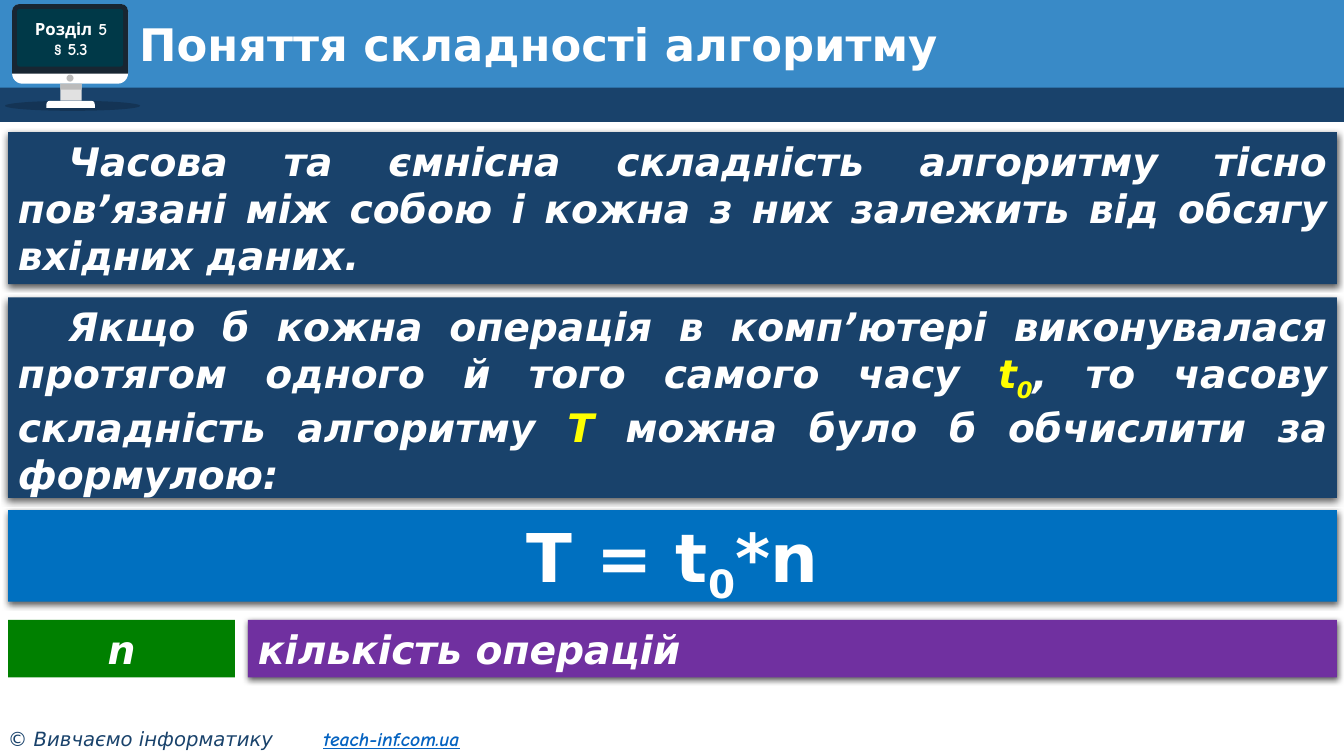
from dataclasses import dataclass

from lxml import etree
from pptx import Presentation
from pptx import util as u
from pptx.dml.color import RGBColor
from pptx.enum import shapes, text
from pptx.oxml.ns import qn

COLORS = {
    "white": "FFFFFF", "black": "000000", "navy": "19426B", "header": "398AC7",
    "formula": "0070C0", "purple": "7030A0", "green": "008000",
    "yellow": "FFFF00", "link": "0563C1", "frame": "182632",
    "screen": "003948", "stand": "E1E1E1", "grey": "BBBBBB",
}
MAIN_FONT, SMALL_FONT = "DejaVu Sans", "Comic Neue"
KIND = shapes.MSO_SHAPE
ALIGN = text.PP_ALIGN
MIDDLE = text.MSO_ANCHOR.MIDDLE
GROW = text.MSO_AUTO_SIZE.SHAPE_TO_FIT_TEXT
MARGIN, FULL_WIDTH = 0.08, 13.18


@dataclass
class Piece:
    words: str
    color: str = "white"
    subscript: bool = False
    font: str = MAIN_FONT
    bold: bool = True
    italic: bool = False
    underline: bool = False


@dataclass
class Block:
    """A plain filled shape; corners are its adjustment values."""
    box: tuple[float, float, float, float]
    color: str
    kind: KIND = KIND.RECTANGLE
    corners: tuple[float, ...] = ()
    alpha: int = 100


@dataclass
class Panel:
    block: Block
    pieces: list[Piece]
    size: int = 28
    align: ALIGN = ALIGN.LEFT
    indent: float = 0
    shadow: bool = True


def rgb(color: str) -> RGBColor:
    return RGBColor.from_string(COLORS[color])


def write(frame, *paragraphs: list[Piece], size: int, align=ALIGN.LEFT,
          anchor=text.MSO_ANCHOR.TOP, fit=text.MSO_AUTO_SIZE.NONE,
          indent: float = 0, tab: float = 0, spacing: float = 1) -> None:
    frame.word_wrap = True
    frame.auto_size = fit
    frame.vertical_anchor = anchor
    for number, pieces in enumerate(paragraphs):
        line = frame.add_paragraph() if number else frame.paragraphs[0]
        line.alignment = align
        line.line_spacing = spacing
        properties = line._p.get_or_add_pPr()
        if indent:
            properties.set("marL", "0")
            properties.set("indent", str(u.Inches(indent)))
        if tab:
            stops = etree.SubElement(properties, qn("a:tabLst"))
            etree.SubElement(stops, qn("a:tab"), pos=str(u.Inches(tab)), algn="l")
        for piece in pieces:
            run = line.add_run()
            run.text = piece.words
            font = run.font
            font.name, font.size = piece.font, u.Pt(size)
            font.bold, font.italic = piece.bold, piece.italic
            font.underline = piece.underline
            font.color.rgb = rgb(piece.color)
            if piece.subscript:
                run._r.get_or_add_rPr().set("baseline", "-25000")


def draw_block(slide, block: Block):
    shape = slide.shapes.add_shape(block.kind, *map(u.Inches, block.box))
    shape.shadow.inherit = False
    shape.line.fill.background()
    shape.fill.solid()
    shape.fill.fore_color.rgb = rgb(block.color)
    for number, value in enumerate(block.corners):
        shape.adjustments[number] = value
    if block.alpha < 100:
        fill = shape._element.spPr.find(qn("a:solidFill"))
        etree.SubElement(fill[0], qn("a:alpha"), val=str(block.alpha * 1000))
    return shape


def add_shadow(shape) -> None:
    effects = shape._element.spPr.find(qn("a:effectLst"))
    outer = etree.SubElement(effects, qn("a:outerShdw"), blurRad=str(u.Pt(4.5)),
                             dist=str(u.Pt(1.5)), dir="5400000", algn="ctr",
                             rotWithShape="0")
    tint = etree.SubElement(outer, qn("a:srgbClr"), val=COLORS["black"])
    etree.SubElement(tint, qn("a:alpha"), val="63000")


def draw_panel(slide, panel: Panel) -> None:
    shape = draw_block(slide, panel.block)
    if panel.shadow:
        add_shadow(shape)
    write(shape.text_frame, panel.pieces, size=panel.size, align=panel.align,
          indent=panel.indent,
          anchor=text.MSO_ANCHOR.TOP if panel.shadow else MIDDLE,
          fit=GROW if panel.shadow else text.MSO_AUTO_SIZE.NONE)


def add_label(slide, box: tuple[float, float, float, float]):
    return slide.shapes.add_textbox(*map(u.Inches, box)).text_frame


def slanted(words: str, color: str = "white", subscript: bool = False) -> Piece:
    return Piece(words, color, subscript, italic=True)


HEADER = [
    Block((0, 0, 13.33, 0.91), "header"),
    Block((0, 0.87, 13.33, 0.34), "navy"),
]
MONITOR = [
    Block((0.05, 1, 1.34, 0.1), "black", KIND.OVAL, alpha=20),
    Block((0.12, 0.04, 1.15, 0.79), "white", KIND.ROUND_2_SAME_RECTANGLE, (0.1, 0.13)),
    Block((0.12, 0.04, 1.15, 0.69), "frame", KIND.ROUND_2_SAME_RECTANGLE, (0.1, 0)),
    Block((0.6, 0.83, 0.21, 0.17), "stand"),
    Block((0.6, 0.83, 0.21, 0.06), "grey"),
    Block((0.46, 1, 0.48, 0.07), "white", KIND.ROUND_2_SAME_RECTANGLE, (0.5, 0)),
    Block((0.66, 0.74, 0.07, 0.07), "grey", KIND.OVAL),
    Block((0.17, 0.09, 1.05, 0.57), "screen", KIND.ROUNDED_RECTANGLE, (0.04,)),
]
PANELS = [
    Panel(Block((MARGIN, 1.31, FULL_WIDTH, 1.51), "navy"),
          [slanted("Часова та ємнісна складність алгоритму тісно пов’язані між "
                   "собою і кожна з них залежить від обсягу вхідних даних.")],
          align=ALIGN.JUSTIFY, indent=0.5),
    Panel(Block((MARGIN, 2.95, FULL_WIDTH, 1.99), "navy"),
          [slanted("Якщо б кожна операція в комп’ютері виконувалася протягом "
                   "одного й того самого часу "),
           slanted("t", "yellow"), slanted("0", "yellow", True),
           slanted(", то часову складність алгоритму "), slanted("Т", "yellow"),
           slanted(" можна було б обчислити за формулою:")],
          align=ALIGN.JUSTIFY, indent=0.5),
    Panel(Block((MARGIN, 5.06, FULL_WIDTH, 0.91), "formula"),
          [Piece("Т = t"), Piece("0", subscript=True), Piece("*n")],
          size=48, align=ALIGN.CENTER),
    Panel(Block((2.46, 6.15, 10.8, 0.57), "purple"), [slanted("кількість операцій")]),
    Panel(Block((MARGIN, 6.15, 2.25, 0.57), "green"), [slanted("n")],
          align=ALIGN.CENTER, shadow=False),
]


def main() -> None:
    deck = Presentation()
    deck.slide_width, deck.slide_height = u.Inches(13.33), u.Inches(7.5)
    slide = deck.slides.add_slide(deck.slide_layouts[5])

    # Header bars and monitor
    for block in HEADER + MONITOR:
        draw_block(slide, block)

    # Footer and section number
    write(add_label(slide, (-0.02, 7.16, 5.23, 0.34)),
          [Piece("© Вивчаємо інформатику\t", "navy", bold=False, italic=True),
           Piece("teach-inf.com.ua", "link", font=SMALL_FONT, italic=True,
                 underline=True)],
          size=14, tab=3.13, fit=GROW)
    write(add_label(slide, (0.13, 0.09, 1.15, 0.59)),
          [Piece("Розділ 5", font=SMALL_FONT)], [Piece("§ 5.3", font=SMALL_FONT)],
          size=12, align=ALIGN.CENTER, anchor=MIDDLE)

    # Title, raised above the header bars
    title = slide.shapes.title
    title.left, title.top = u.Inches(1.28), u.Inches(0.18)
    title.width, title.height = u.Inches(11.72), u.Inches(0.58)
    write(title.text_frame, [Piece("Поняття складності алгоритму")],
          size=32, anchor=MIDDLE, spacing=0.9)
    slide.shapes._spTree.append(title._element)

    # Content panels
    for panel in PANELS:
        draw_panel(slide, panel)

    deck.save("out.pptx")


if __name__ == "__main__":
    main()
